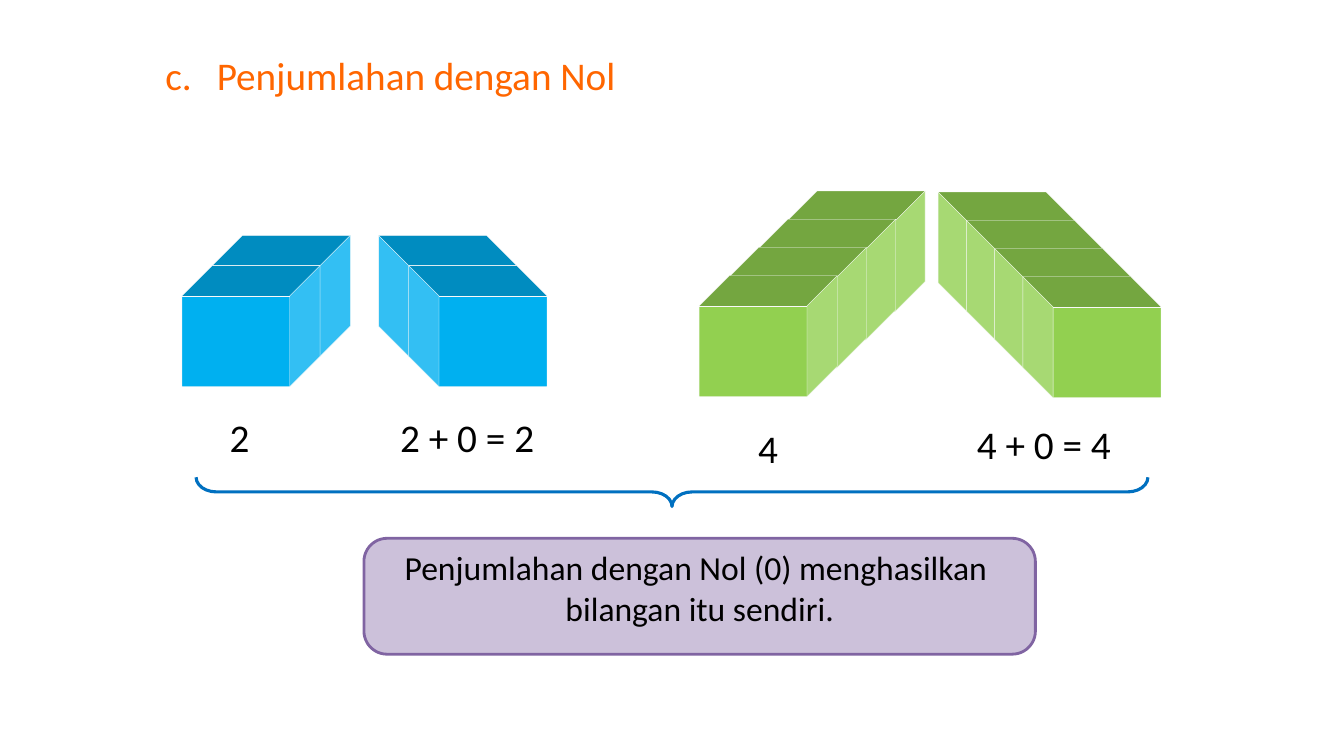
from pptx import Presentation
from pptx.dml.color import RGBColor
from pptx.enum.shapes import MSO_SHAPE as Shape
from pptx.enum.text import MSO_ANCHOR as Anchor, MSO_AUTO_SIZE as AutoSize, PP_ALIGN as Align
from pptx.oxml import parse_xml
from pptx.oxml.ns import nsdecls
from pptx.util import Inches, Pt

ORANGE = RGBColor(0xFF, 0x66, 0x00)
GREEN = RGBColor(0x92, 0xD0, 0x50)
BLUE = RGBColor(0x00, 0xB0, 0xF0)
EDGE = RGBColor(0xF9, 0xF9, 0xF9)
BLACK = RGBColor(0x00, 0x00, 0x00)
LILAC = RGBColor(0xCC, 0xC1, 0xDA)
PURPLE = RGBColor(0x80, 0x64, 0xA2)
BRACE_BLUE = RGBColor(0x00, 0x70, 0xC0)


class SlideBuilder:
    font = "Calibri"
    cube_width, cube_height = 1.2, 1.37

    def __init__(self, page):
        self.page = page

    def fill_text(self, box, lines, size, color, align=Align.LEFT, wrap=False):
        frame = box.text_frame
        frame.word_wrap = wrap
        frame.auto_size = AutoSize.SHAPE_TO_FIT_TEXT
        frame.vertical_anchor = Anchor.TOP
        para = frame.paragraphs[0]
        para.alignment = align
        for index, line in enumerate(lines):
            if index:
                para.add_line_break()
            span = para.add_run()
            span.text = line
            span.font.name = self.font
            span.font.size = Pt(size)
            span.font.color.rgb = color
        return para

    def title(self, left, top, width, height, text, tab):
        box = self.page.shapes.title
        box.left, box.top = Inches(left), Inches(top)
        box.width, box.height = Inches(width), Inches(height)
        para = self.fill_text(box, [text], 28, ORANGE)
        stops = f'<a:tabLst {nsdecls("a")}><a:tab pos="{Inches(tab)}" algn="l"/></a:tabLst>'
        para._p.get_or_add_pPr().append(parse_xml(stops))

    def text(self, left, top, width, height, lines, size=28, align=Align.LEFT, wrap=False):
        box = self.page.shapes.add_textbox(
            Inches(left), Inches(top), Inches(width), Inches(height))
        self.fill_text(box, lines, size, BLACK, align, wrap)

    def shape(self, kind, left, top, width, height, fill, line, weight, parent=None):
        shape = (parent or self.page).shapes.add_shape(
            kind, Inches(left), Inches(top), Inches(width), Inches(height))
        shape.shadow.inherit = False
        if fill is None:
            shape.fill.background()
        else:
            shape.fill.solid()
            shape.fill.fore_color.rgb = fill
        shape.line.color.rgb = line
        shape.line.width = Pt(weight)
        return shape

    def cube_row(self, left, top, count, step_x, step_y, color):
        """Stack cubes from back to front; a row that runs left is mirrored."""
        row = self.page.shapes.add_group_shape()
        for index in range(count):
            cube = self.shape(Shape.CUBE, left + index * step_x, top + index * step_y,
                              self.cube_width, self.cube_height, color, EDGE, 0.25, row)
            cube.rotation = 90 if step_x < 0 else 270
            if step_x < 0:
                cube._element.spPr.xfrm.set("flipH", "1")

    def brace(self, left, top, width, height):
        brace = self.shape(Shape.RIGHT_BRACE, left, top, width, height, None, BRACE_BLUE, 2.25)
        brace.rotation = 90
        brace.adjustments[0] = 0.69

    def panel(self, left, top, width, height):
        panel = self.shape(Shape.ROUNDED_RECTANGLE, left, top, width, height, LILAC, PURPLE, 2)
        panel.adjustments[0] = 0.2


def main():
    deck = Presentation()
    deck.slide_width, deck.slide_height = Inches(13.33), Inches(7.5)
    slide = SlideBuilder(deck.slides.add_slide(deck.slide_layouts[5]))

    slide.title(1.54, 0.46, 4.71, 0.57, "c.\tPenjumlahan dengan Nol", 0.51)

    slide.cube_row(7.89, 1.81, 4, -0.29, 0.28, GREEN)
    slide.cube_row(2.19, 2.25, 2, -0.3, 0.3, BLUE)
    slide.cube_row(3.84, 2.25, 2, 0.3, 0.3, BLUE)
    slide.cube_row(9.39, 1.82, 4, 0.28, 0.28, GREEN)

    for left, top, width, label in [
        (2.18, 4.05, 0.4, "2"),
        (3.87, 4.05, 1.55, "2 + 0 = 2"),
        (7.42, 4.16, 0.4, "4"),
        (9.59, 4.12, 1.55, "4 + 0 = 4"),
    ]:
        slide.text(left, top, width, 0.57, [label])

    slide.panel(3.61, 5.34, 6.66, 1.15)
    slide.text(2.87, 5.38, 8.14, 0.91,
               ["Penjumlahan dengan Nol (0) menghasilkan ", "bilangan itu sendiri."],
               24, Align.CENTER, wrap=True)
    slide.brace(6.52, 0.16, 0.29, 9.44)

    deck.save("out.pptx")


if __name__ == "__main__":
    main()
